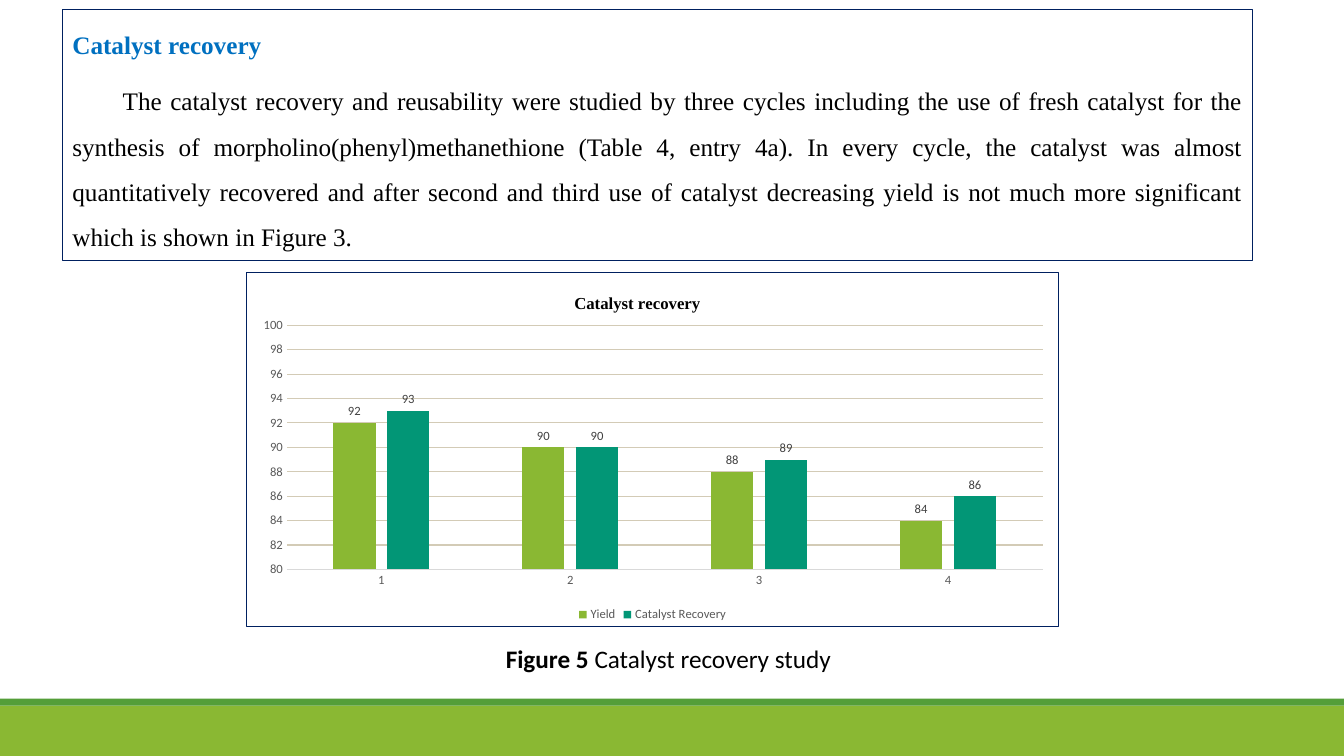
"""Builds the catalyst recovery slide with its clustered column chart."""
from lxml import etree
from pptx import Presentation
from pptx.chart.data import CategoryChartData
from pptx.dml.color import RGBColor
from pptx.enum.chart import XL_CHART_TYPE, XL_LABEL_POSITION, XL_LEGEND_POSITION, XL_TICK_MARK
from pptx.enum.shapes import MSO_SHAPE
from pptx.enum.text import MSO_ANCHOR, MSO_AUTO_SIZE, PP_ALIGN
from pptx.oxml import parse_xml
from pptx.oxml.ns import nsdecls, qn
from pptx.util import Pt

WHITE = RGBColor(0xFF, 0xFF, 0xFF)
BLACK = RGBColor(0, 0, 0)
NAVY = RGBColor(0x00, 0x20, 0x60)
BLUE = RGBColor(0x00, 0x70, 0xC0)
LIME = RGBColor(0x8A, 0xB8, 0x33)
GREEN = RGBColor(0x54, 0x9E, 0x39)
TEAL = RGBColor(0x02, 0x96, 0x76)
AXIS_GRAY = RGBColor(0x59, 0x59, 0x59)
LABEL_GRAY = RGBColor(0x40, 0x40, 0x40)
LINE_GRAY = RGBColor(0xD9, 0xD9, 0xD9)
GRID_BEIGE = RGBColor(0xD3, 0xCB, 0xB6)
SERIF, SANS = "Times New Roman", "Calibri"


def style_font(font, name, size, color, bold=False):
    for attribute, value in {"name": name, "size": Pt(size), "bold": bold}.items():
        setattr(font, attribute, value)
    font.color.rgb = color


def place_chart_part(parent, index, values):
    for automatic in parent.findall(qn("c:layout")):
        parent.remove(automatic)
    layout = parse_xml(f"<c:layout {nsdecls('c')}><c:manualLayout/></c:layout>")
    for tag, value in values.items():
        etree.SubElement(layout[0], qn(f"c:{tag}")).set("val", str(value))
    parent.insert(index, layout)


prs = Presentation()
prs.slide_width, prs.slide_height = Pt(960), Pt(540)
slide = prs.slides.add_slide(prs.slide_layouts[6])

for top, height, color in ((504, 36, LIME), (499, 5, GREEN)):
    band = slide.shapes.add_shape(MSO_SHAPE.RECTANGLE, 0, Pt(top), Pt(960), Pt(height))
    band.shadow.inherit = False
    band.fill.solid()
    band.fill.fore_color.rgb = color
    band.line.fill.background()

discussion = slide.shapes.add_shape(MSO_SHAPE.RECTANGLE, Pt(44.6), Pt(6.5), Pt(850.3), Pt(179.3))
discussion.shadow.inherit = False
discussion.fill.solid()
discussion.fill.fore_color.rgb = WHITE
discussion.line.color.rgb = NAVY
discussion.line.width = Pt(0.75)
discussion_frame = discussion.text_frame
discussion_frame.word_wrap = True
discussion_frame.auto_size = MSO_AUTO_SIZE.SHAPE_TO_FIT_TEXT
discussion_frame.vertical_anchor = MSO_ANCHOR.TOP
heading = discussion_frame.paragraphs[0]
findings = discussion_frame.add_paragraph()
findings_text = (
    "The catalyst recovery and reusability were studied by three cycles including the use of "
    "fresh catalyst for the synthesis of morpholino(phenyl)methanethione (Table 4, entry 4a). "
    "In every cycle, the catalyst was almost quantitatively recovered and after second and third "
    "use of catalyst decreasing yield is not much more significant which is shown in Figure 3."
)
for paragraph, text, color, bold in (
    (heading, "Catalyst recovery", BLUE, True),
    (findings, findings_text, BLACK, False),
):
    run = paragraph.add_run()
    run.text = text
    style_font(run.font, SERIF, 18, color, bold)
    spacing = {"alignment": PP_ALIGN.JUSTIFY, "line_spacing": 1.5, "space_after": Pt(8)}
    for attribute, value in spacing.items():
        setattr(paragraph, attribute, value)
findings._p.get_or_add_pPr().set("indent", str(Pt(36)))

recovery_data = CategoryChartData()
recovery_data.categories = ["1", "2", "3", "4"]
recovery_data.add_series("Yield", (92, 90, 88, 84))
recovery_data.add_series("Catalyst Recovery", (93, 90, 89, 86))
chart = slide.shapes.add_chart(
    XL_CHART_TYPE.COLUMN_CLUSTERED, Pt(175.5), Pt(194.2), Pt(581.2), Pt(253.4), recovery_data
).chart
style_font(chart.font, SANS, 10, BLACK)
chart._chartSpace.find(qn("c:chart")).addnext(parse_xml(
    f"<c:spPr {nsdecls('c', 'a')}>"
    f'<a:solidFill><a:srgbClr val="{WHITE}"/></a:solidFill>'
    f'<a:ln w="{Pt(0.75)}"><a:solidFill><a:srgbClr val="{NAVY}"/></a:solidFill></a:ln></c:spPr>'
))

chart.has_title = True
chart_title = chart.chart_title
chart_title.include_in_layout = False
title_run = chart_title.text_frame.paragraphs[0].add_run()
title_run.text = "Catalyst recovery"
style_font(title_run.font, SERIF, 12, BLACK, True)
place_chart_part(chart_title._element, 1, {"xMode": "edge", "yMode": "edge", "x": 0.4, "y": 0.05})
place_chart_part(chart._chartSpace.find(qn("c:chart")).find(qn("c:plotArea")), 0, {
    "layoutTarget": "inner", "xMode": "edge", "yMode": "edge",
    "x": 0.05, "y": 0.15, "w": 0.93, "h": 0.69,
})

chart.has_legend = True
chart.legend.position = XL_LEGEND_POSITION.BOTTOM
chart.legend.include_in_layout = False
style_font(chart.legend.font, SANS, 9, AXIS_GRAY)

cycle_axis, percent_axis = chart.category_axis, chart.value_axis
for axis in (cycle_axis, percent_axis):
    axis.major_tick_mark = axis.minor_tick_mark = XL_TICK_MARK.NONE
    style_font(axis.tick_labels.font, SANS, 9, AXIS_GRAY)
cycle_axis.format.line.color.rgb = LINE_GRAY
cycle_axis.format.line.width = Pt(0.75)
for attribute, value in {"minimum_scale": 80, "maximum_scale": 100, "major_unit": 2}.items():
    setattr(percent_axis, attribute, value)
percent_axis.format.line.fill.background()
gridline = percent_axis.major_gridlines.format.line
gridline.color.rgb = GRID_BEIGE
gridline.width = Pt(0.75)

columns = chart.plots[0]
for attribute, value in {"gap_width": 219, "overlap": -27, "vary_by_categories": False}.items():
    setattr(columns, attribute, value)
for series, color in zip(columns.series, (LIME, TEAL)):
    series.format.fill.solid()
    series.format.fill.fore_color.rgb = color
    series.data_labels.show_value = True
    series.data_labels.position = XL_LABEL_POSITION.OUTSIDE_END
    style_font(series.data_labels.font, SANS, 9, LABEL_GRAY)

caption = slide.shapes.add_textbox(Pt(354.2), Pt(455.8), Pt(248.4), Pt(28.8)).text_frame
caption.word_wrap = False
caption.auto_size = MSO_AUTO_SIZE.SHAPE_TO_FIT_TEXT
for text, bold in (("Figure 5 ", True), ("Catalyst recovery study", False)):
    run = caption.paragraphs[0].add_run()
    run.text = text
    style_font(run.font, SANS, 18, BLACK, bold)

prs.save("out.pptx")
